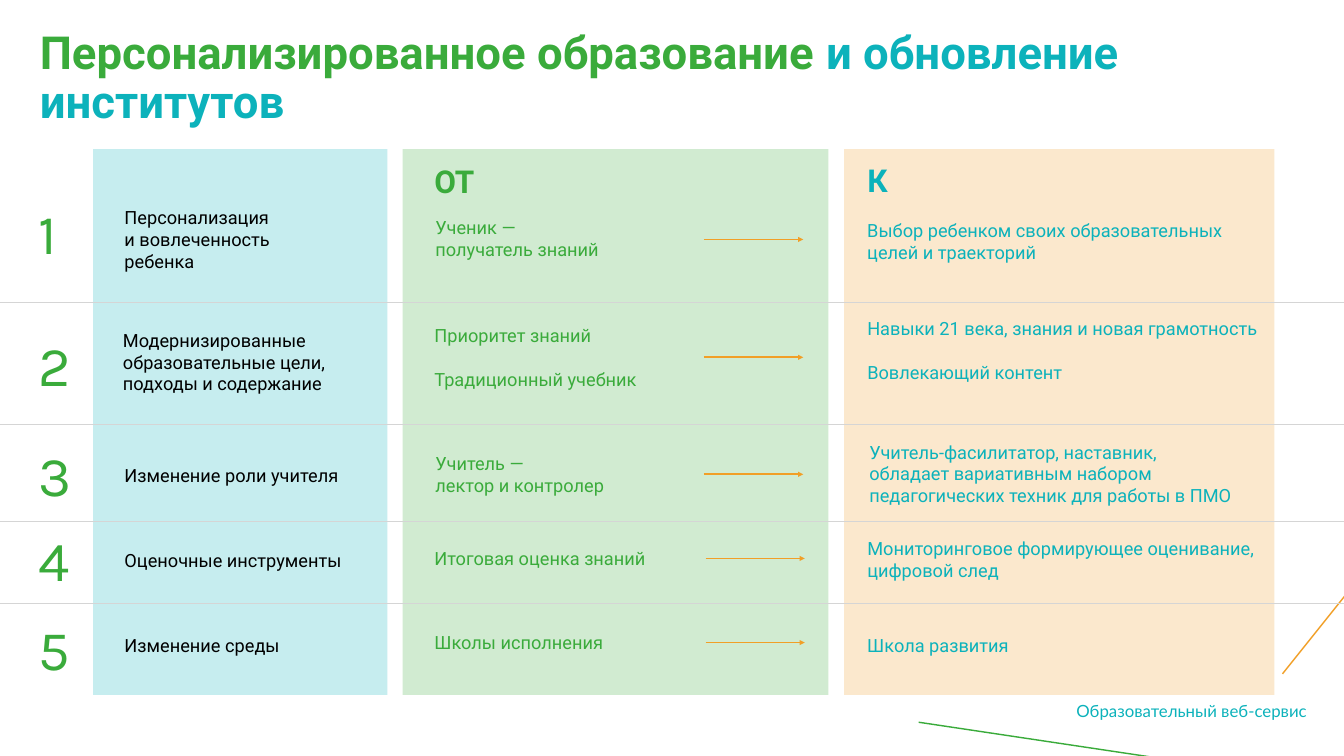
from lxml import etree
from pptx import Presentation
from pptx.dml.color import RGBColor
from pptx.enum.shapes import MSO_CONNECTOR, MSO_SHAPE
from pptx.enum.text import MSO_ANCHOR, MSO_AUTO_SIZE, PP_ALIGN
from pptx.oxml.ns import qn
from pptx.util import Inches, Pt

STRAIGHT, RECTANGLE = MSO_CONNECTOR.STRAIGHT, MSO_SHAPE.RECTANGLE
TOP, MIDDLE = MSO_ANCHOR.TOP, MSO_ANCHOR.MIDDLE
LEFT, RIGHT = PP_ALIGN.LEFT, PP_ALIGN.RIGHT
GROW, FIXED = MSO_AUTO_SIZE.SHAPE_TO_FIT_TEXT, MSO_AUTO_SIZE.NONE

SLIDE_WIDTH, SLIDE_HEIGHT = 26.67, 15
COLORS = {"green": "3AAB3B", "teal": "0CB2BB", "orange": "F19F27",
          "gray": "D5D5D5", "black": "000000"}
BODY_SIZE, LINE_HEIGHT, INSET = 26, 0.44, 0.05
PANEL_TOP, PANEL_HEIGHT = 2.96, 10.83
PANELS = [(7.99, 8.45, "green"), (1.85, 5.84, "teal"), (16.75, 8.54, "orange")]
HEADINGS = [("ОТ", 8.57, 3.17, "green"), ("К", 17.16, 3.14, "teal")]
DIVIDERS = [6, 8.42, 10.35, 11.98]
NUMBER_TOPS = [4.18, 6.8, 8.98, 10.66, 12.42]
ARROWS = [(13.97, 4.75), (13.97, 7.09), (13.97, 9.41), (14, 11.08), (14, 12.75)]
ARROW_LENGTH = 1.97

# Cells: left, top, width, number of lines, paragraphs
TOPICS = [
    (2.42, 4.05, 6.19, 3, ["Персонализация\vи вовлеченность\vребенка"]),
    (2.39, 6.48, 6.25, 3, ["Модернизированные образовательные цели,",
                           "подходы и содержание"]),
    (2.42, 9.16, 5.65, 1, ["Изменение роли учителя"]),
    (2.42, 10.86, 5.65, 1, ["Оценочные инструменты"]),
    (2.42, 12.54, 5.65, 1, ["Изменение среды"]),
]
FROM_CELLS = [
    (8.59, 4.24, 3.59, 2, ["Ученик —", "получатель знаний"]),
    (8.57, 6.39, 4.56, 3, ["Приоритет знаний", "Традиционный учебник"]),
    (8.59, 8.92, 3.76, 2, ["Учитель —", "лектор и контролер"]),
    (8.57, 10.82, 4.63, 1, ["Итоговая оценка знаний"]),
    (8.57, 12.48, 3.69, 1, ["Школы исполнения"]),
]
TO_CELLS = [
    (17.16, 4.31, 7.54, 2, ["Выбор ребенком своих образовательных целей и траекторий"]),
    (17.16, 6.25, 7.99, 4, ["Навыки 21 века, знания и новая грамотность",
                            "Вовлекающий контент"]),
    (17.2, 8.7, 8.44, 3, ["Учитель-фасилитатор, наставник,",
                          "обладает вариативным набором педагогических техник "
                          "для работы в ПМО"]),
    (17.16, 10.61, 7.99, 2, ["Мониторинговое формирующее оценивание, цифровой след"]),
    (17.16, 12.54, 3.1, 1, ["Школа развития"]),
]
SPACED_ROW = 1  # this row separates its statements by one line


def rgb(color):
    return RGBColor.from_string(COLORS[color])


def format_font(run, size, color, name="Roboto", bold=False):
    values = {"size": Pt(size), "name": name, "bold": bold}
    for attribute, value in values.items():
        setattr(run.font, attribute, value)
    run.font.color.rgb = rgb(color)


def format_frame(frame, inset=INSET, anchor=TOP, wrap=True, auto_size=FIXED):
    values = {"word_wrap": wrap, "auto_size": auto_size, "vertical_anchor": anchor}
    for side in ("left", "top", "right", "bottom"):
        values[f"margin_{side}"] = Inches(inset)
    for attribute, value in values.items():
        setattr(frame, attribute, value)


def add_text(slide, box, paragraphs, font, frame_format=None, align=LEFT,
             line_spacing=None, gap=0):
    shape = slide.shapes.add_textbox(*map(Inches, box))
    frame = shape.text_frame
    format_frame(frame, **(frame_format or {}))
    frame.text = "\n".join(paragraphs)
    for index, paragraph in enumerate(frame.paragraphs):
        paragraph.alignment = align
        paragraph.line_spacing = line_spacing
        if index and gap:
            paragraph.space_before = Pt(gap)
        for run in paragraph.runs:
            format_font(run, **font)


def add_column(slide, cells, color, gap=0, wrap=True):
    for row, (left, top, width, lines, paragraphs) in enumerate(cells):
        height = lines * LINE_HEIGHT + 2 * INSET
        add_text(slide, (left, top, width, height), paragraphs,
                 {"size": BODY_SIZE, "color": color},
                 {"auto_size": GROW, "wrap": wrap},
                 gap=gap if row == SPACED_ROW else 0)


def add_panel(slide, left, width, color):
    shape = slide.shapes.add_shape(
        RECTANGLE, *map(Inches, (left, PANEL_TOP, width, PANEL_HEIGHT)))
    shape.shadow.inherit = False
    shape.fill.solid()
    shape.fill.fore_color.rgb = rgb(color)
    shape.line.fill.background()
    color_element = shape.element.spPr.find(f".//{qn('a:srgbClr')}")
    etree.SubElement(color_element, qn("a:alpha"), val="23000")


def add_line(slide, start, end, color, width=2, arrow=False):
    connector = slide.shapes.add_connector(STRAIGHT, *map(Inches, start + end))
    connector.line.color.rgb = rgb(color)
    connector.line.width = Pt(width)
    properties = connector.element.spPr
    if arrow:
        etree.SubElement(properties.find(qn("a:ln")), qn("a:tailEnd"), type="triangle")
    etree.SubElement(properties, qn("a:effectLst"))


def add_title(slide):
    title = slide.shapes.title
    title.left, title.top, title.width, title.height = map(
        Inches, (0.74, 0.55, 25.32, 2.01))
    format_frame(title.text_frame)
    paragraph = title.text_frame.paragraphs[0]
    paragraph.alignment, paragraph.line_spacing = LEFT, 0.9
    for text, color in (("Персонализированное образование ", "green"),
                        ("и обновление институтов", "teal")):
        run = paragraph.add_run()
        run.text = text
        format_font(run, 65, color, bold=True)


def main():
    presentation = Presentation()
    presentation.slide_width = Inches(SLIDE_WIDTH)
    presentation.slide_height = Inches(SLIDE_HEIGHT)
    slide = presentation.slides.add_slide(presentation.slide_layouts[5])

    # Footer and corner lines
    add_text(slide, (16.45, 13.96, 9.53, 0.54), ["Образовательный веб-сервис"],
             {"size": 24, "color": "teal", "name": "Lato"},
             align=RIGHT, line_spacing=0.7)
    add_line(slide, (25.45, 13.37), (27.89, 10.32), "orange")
    add_line(slide, (18.23, 14.33), (24.98, 15.34), "green")

    # Column panels and title
    for panel in PANELS:
        add_panel(slide, *panel)
    add_title(slide)

    # Row numbers and column texts
    for number, top in enumerate(NUMBER_TOPS, start=1):
        add_text(slide, (0.77, top, 0.86, 1.03), [str(number)],
                 {"size": 80, "color": "green", "name": "Karla"},
                 {"inset": 0, "anchor": MIDDLE}, line_spacing=0.9)
    line_gap = LINE_HEIGHT * 72
    add_column(slide, TOPICS, "black")
    add_column(slide, FROM_CELLS, "green", line_gap, wrap=False)
    add_column(slide, TO_CELLS, "teal", line_gap)
    for text, left, top, color in HEADINGS:
        add_text(slide, (left, top, 5.65, 0.86), [text],
                 {"size": 45, "color": color, "bold": True}, {"auto_size": GROW})

    # Row dividers and arrows
    for top in DIVIDERS:
        add_line(slide, (0, top), (SLIDE_WIDTH, top), "gray")
    for left, top in ARROWS:
        add_line(slide, (left, top), (left + ARROW_LENGTH, top), "orange", 2.5, True)

    presentation.save("out.pptx")


if __name__ == "__main__":
    main()
